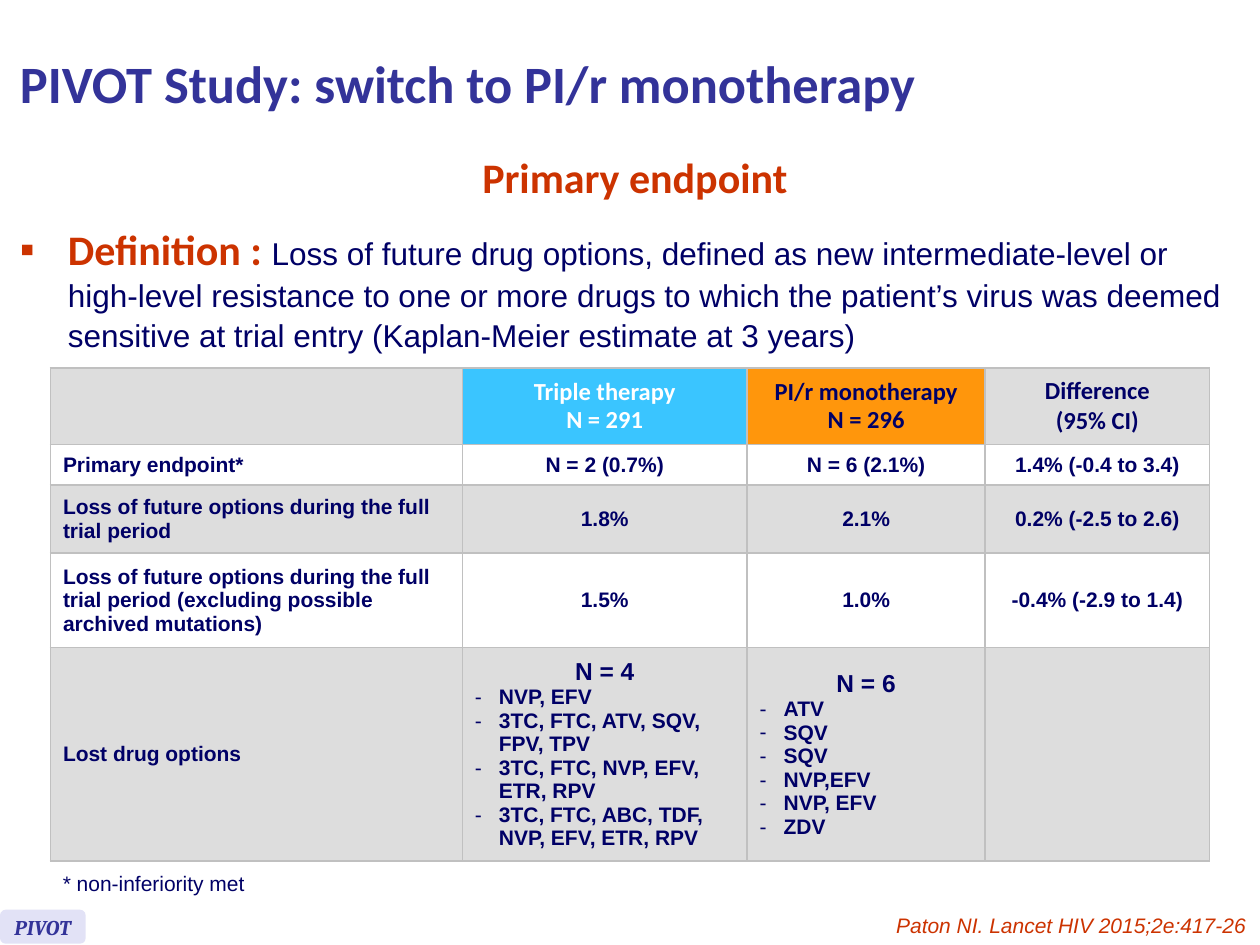
from dataclasses import dataclass

from lxml import etree
from pptx import Presentation
from pptx import util as u
from pptx.dml.color import RGBColor
from pptx.enum import shapes, text
from pptx.oxml import ns

WIDTH, HEIGHT = u.Inches(10), u.Inches(7.5)
LEFT, CENTER, RIGHT = text.PP_ALIGN.LEFT, text.PP_ALIGN.CENTER, text.PP_ALIGN.RIGHT


@dataclass(frozen=True)
class Style:
    size: float
    font: str
    color: str
    bold: bool = False
    italic: bool = False


class Theme:
    navy, red, white = "000066", "CC3300", "FFFFFF"
    gray, border = "DDDDDD", "C0C0C0"
    blue, orange, lavender = "3AC5FF", "FF960C", "E2E2F6"
    title = Style(30, "Calibri", "333399", bold=True)
    heading = Style(24, "Calibri", red, bold=True)
    body = Style(18, "Arial", navy)
    note = Style(12, "Arial", navy)
    citation = Style(12, "Arial", red, italic=True)
    badge = Style(12, "Cambria", "333399", bold=True, italic=True)
    header = Style(14, "Calibri", navy, bold=True)
    header_light = Style(14, "Calibri", white, bold=True)
    cell = Style(12, "Arial", navy, bold=True)
    count = Style(14, "Arial", navy, bold=True)


COLUMN_SHARES = (3.27, 2.26, 1.89, 1.78)
ROW_SHARES = (0.61, 0.32, 0.54, 0.75, 1.63)
HEADERS = (
    ((), Theme.gray, Theme.header, 1),
    (("Triple therapy", "N = 291"), Theme.blue, Theme.header_light, 0.95),
    (("PI/r monotherapy", "N = 296"), Theme.orange, Theme.header, 0.95),
    (("Difference", "(95% CI)"), Theme.gray, Theme.header, 1),
)
RESULTS = (
    ("Primary endpoint*", "N = 2 (0.7%)", "N = 6 (2.1%)", "1.4% (-0.4 to 3.4)"),
    ("Loss of future options during the full trial period",
     "1.8%", "2.1%", "0.2% (-2.5 to 2.6)"),
    ("Loss of future options during the full trial period "
     "(excluding possible archived mutations)",
     "1.5%", "1.0%", "-0.4% (-2.9 to 1.4)"),
    ("Lost drug options", "", "", ""),
)
LOST_OPTIONS = (
    ("N = 4", ("NVP, EFV", "3TC, FTC, ATV, SQV, FPV, TPV",
               "3TC, FTC, NVP, EFV, ETR, RPV",
               "3TC, FTC, ABC, TDF, NVP, EFV, ETR, RPV")),
    ("N = 6", ("ATV", "SQV", "SQV", "NVP,EFV", "NVP, EFV", "ZDV")),
)


def place(left, top, width, height):
    """Turn percentages of the slide into lengths."""
    return [round(share * side / 100) for share, side in
            zip((left, top, width, height), (WIDTH, HEIGHT) * 2)]


def rgb(color):
    return RGBColor.from_string(color)


def add_run(paragraph, words, style):
    run = paragraph.add_run()
    run.text = words
    font = run.font
    font.size, font.name = u.Pt(style.size), style.font
    font.bold, font.italic = style.bold, style.italic
    font.color.rgb = rgb(style.color)


def set_bullet(paragraph, mark, color, indent):
    properties = paragraph._p.get_or_add_pPr()
    properties.set("marL", str(u.Inches(indent)))
    properties.set("indent", str(-u.Inches(indent)))
    bullet_color = etree.SubElement(properties, ns.qn("a:buClr"))
    etree.SubElement(bullet_color, ns.qn("a:srgbClr"), val=color)
    etree.SubElement(properties, ns.qn("a:buFont"), typeface="Arial")
    etree.SubElement(properties, ns.qn("a:buChar"), char=mark)


def next_paragraph(frame):
    """Give the empty first paragraph, or a new one after it."""
    first = frame.paragraphs[0]
    return frame.add_paragraph() if first.runs else first


def add_line(frame, words, style, align=LEFT, spacing=None):
    paragraph = next_paragraph(frame)
    paragraph.alignment = align
    if spacing:
        paragraph.line_spacing = spacing
    add_run(paragraph, words, style)


def add_text_box(slide, area, anchor=text.MSO_ANCHOR.TOP):
    frame = slide.shapes.add_textbox(*place(*area)).text_frame
    frame.word_wrap = True
    frame.vertical_anchor = anchor
    return frame


def add_definition(slide):
    frame = add_text_box(slide, (0.6, 22.67, 97.5, 17.33))
    paragraph = frame.paragraphs[0]
    set_bullet(paragraph, "▪", Theme.red, 0.38)
    paragraph.line_spacing = 1.06
    add_run(paragraph, "Definition : ", Theme.heading)
    add_run(paragraph,
            "Loss of future drug options, defined as new intermediate-level or "
            "high-level resistance to one or more drugs to which the patient’s "
            "virus was deemed sensitive at trial entry "
            "(Kaplan-Meier estimate at 3 years)", Theme.body)


def add_badge(slide):
    badge = slide.shapes.add_shape(
        shapes.MSO_SHAPE.ROUNDED_RECTANGLE, *place(0, 96.27, 6.8, 3.6))
    badge.shadow.inherit = False
    badge.fill.solid()
    badge.fill.fore_color.rgb = rgb(Theme.lavender)
    badge.line.fill.background()
    frame = badge.text_frame
    frame.word_wrap = False
    frame.vertical_anchor = text.MSO_ANCHOR.MIDDLE
    add_line(frame, "PIVOT", Theme.badge, CENTER)


def format_cell(cell, color):
    cell.fill.solid()
    cell.fill.fore_color.rgb = rgb(color)
    cell.vertical_anchor = text.MSO_ANCHOR.MIDDLE
    cell.margin_top = cell.margin_bottom = u.Inches(0.03)
    properties = cell._tc.get_or_add_tcPr()
    for index, side in enumerate("LRTB"):
        line = etree.Element(ns.qn(f"a:ln{side}"), w=str(u.Pt(1)))
        fill = etree.SubElement(line, ns.qn("a:solidFill"))
        etree.SubElement(fill, ns.qn("a:srgbClr"), val=Theme.border)
        properties.insert(index, line)


def fill_lost_options(cell, count, drugs):
    frame = cell.text_frame
    add_line(frame, count, Theme.count, CENTER)
    for drug in drugs:
        paragraph = next_paragraph(frame)
        set_bullet(paragraph, "-", Theme.navy, 0.19)
        add_run(paragraph, drug, Theme.cell)


def add_results_table(slide):
    table = slide.shapes.add_table(
        len(ROW_SHARES), len(COLUMN_SHARES), *place(4, 38.93, 92, 51.33)).table
    for column, share in zip(table.columns, COLUMN_SHARES):
        column.width = u.Inches(share)
    for row, share in zip(table.rows, ROW_SHARES):
        row.height = u.Inches(share)

    for column, (lines, color, style, spacing) in enumerate(HEADERS):
        cell = table.cell(0, column)
        format_cell(cell, color)
        for line in lines:
            add_line(cell.text_frame, line, style, CENTER, spacing)

    for row, values in enumerate(RESULTS, start=1):
        for column, value in enumerate(values):
            cell = table.cell(row, column)
            format_cell(cell, Theme.white if row % 2 else Theme.gray)
            if value:
                add_line(cell.text_frame, value, Theme.cell,
                         CENTER if column else LEFT)

    for column, (count, drugs) in enumerate(LOST_OPTIONS, start=1):
        fill_lost_options(table.cell(len(RESULTS), column), count, drugs)


def main():
    presentation = Presentation()
    presentation.slide_width, presentation.slide_height = WIDTH, HEIGHT
    slide = presentation.slides.add_slide(presentation.slide_layouts[6])

    add_definition(slide)
    add_line(add_text_box(slide, (34.6, 17.87, 31.6, 4.67)),
             "Primary endpoint", Theme.heading, CENTER, u.Pt(15.2))
    add_line(add_text_box(slide, (4, 91.47, 16.6, 4)),
             "* non-inferiority met", Theme.note)
    add_line(add_text_box(slide, (0.6, 0.67, 89.6, 16.13), text.MSO_ANCHOR.MIDDLE),
             "PIVOT Study: switch to PI/r monotherapy", Theme.title)
    add_badge(slide)
    add_results_table(slide)
    add_line(add_text_box(slide, (64.9, 95.87, 35, 4)),
             "Paton NI. Lancet HIV 2015;2e:417-26", Theme.citation, RIGHT)

    presentation.save("out.pptx")


if __name__ == "__main__":
    main()
